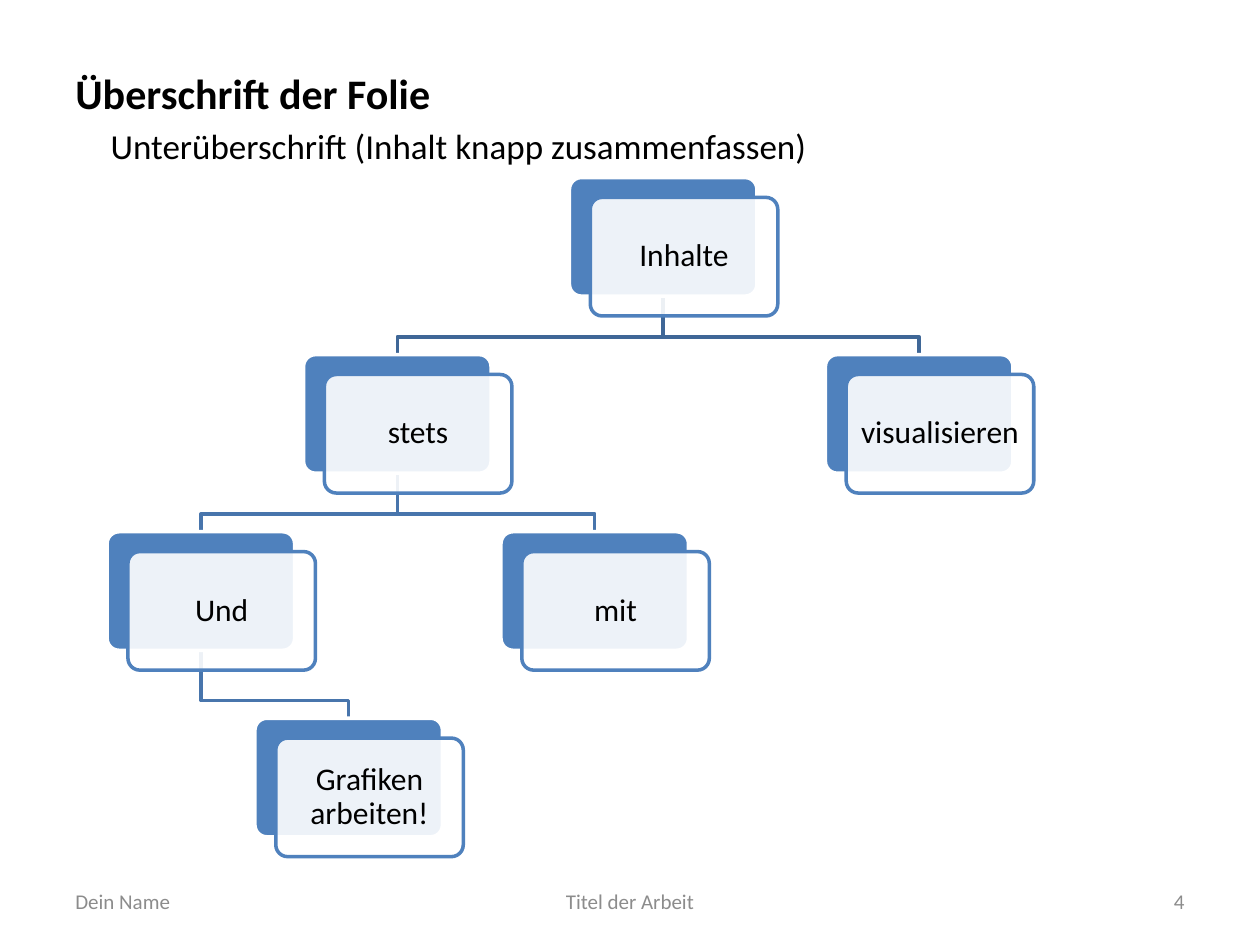
from lxml.etree import SubElement
from pptx import Presentation
from pptx.dml.color import RGBColor
from pptx.enum.shapes import MSO_SHAPE
from pptx.enum.text import MSO_ANCHOR, PP_ALIGN
from pptx.oxml.ns import qn
from pptx.util import Cm, Pt

BLACK = RGBColor(0x00, 0x00, 0x00)
WHITE = RGBColor(0xFF, 0xFF, 0xFF)
GREY = RGBColor(0x8C, 0x8C, 0x8C)
BLUE = RGBColor(0x4F, 0x81, 0xBD)
ROOT_BRANCH = RGBColor(0x3F, 0x67, 0x97)
LOWER_BRANCH = RGBColor(0x48, 0x75, 0xAC)

CARD_WIDTH, CARD_HEIGHT = Cm(3.78), Cm(2.39)
FRONT_SHIFT_X, FRONT_SHIFT_Y = Cm(0.42), Cm(0.4)
BEND_GAP = Cm(0.36)
OUTLINE = Pt(2)

# Label: (left and top in cm within the chart, parent label)
NODES = {
    "Inhalte": (9.32, 0, None),
    "stets": (3.96, 3.57, "Inhalte"),
    "Und": (0, 7.14, "stets"),
    "Grafiken arbeiten!": (2.98, 10.9, "Und"),
    "mit": (7.94, 7.14, "stets"),
    "visualisieren": (14.48, 3.57, "Inhalte"),
}


def write_text(shape, text, size, color=BLACK, bold=False,
               align=PP_ALIGN.LEFT, anchor=MSO_ANCHOR.MIDDLE):
    frame = shape.text_frame
    frame.word_wrap = True
    frame.vertical_anchor = anchor
    paragraph = frame.paragraphs[0]
    paragraph.alignment = align
    run = paragraph.add_run()
    run.text = text
    formats = {"name": "Calibri", "size": Pt(size), "bold": bold}
    for attribute, value in formats.items():
        setattr(run.font, attribute, value)
    run.font.color.rgb = color
    return paragraph


def add_heading(slide, left, top, width):
    title = slide.shapes.add_textbox(left, top, width, Cm(2.2))
    write_text(title, "Überschrift der Folie", 24, bold=True)
    subtitle = slide.shapes.add_textbox(left + Cm(0.71), top + Cm(1.63), Cm(18.26), Cm(1.11))
    write_text(subtitle, "Unterüberschrift (Inhalt knapp zusammenfassen)", 20,
               anchor=MSO_ANCHOR.TOP)


def add_footer(slide, left, top, width, height):
    side, middle = Cm(5.93), Cm(8.04)
    entries = (
        ("Dein Name", 0, side, PP_ALIGN.LEFT),
        ("Titel der Arbeit", (width - middle) // 2, middle, PP_ALIGN.CENTER),
        ("4", width - side, side, PP_ALIGN.RIGHT),
    )
    for text, offset, entry_width, align in entries:
        entry = slide.shapes.add_textbox(left + offset, top, entry_width, height)
        write_text(entry, text, 12, GREY, align=align)


def add_branch(slide, parent, child, color):
    """Draw a stepped line from the parent's bottom to the child's top."""
    start_x, child_x = (left + CARD_WIDTH // 2 for left, _ in (parent, child))
    start_y, child_y = parent[1] + CARD_HEIGHT, child[1]
    bend_y = child_y - BEND_GAP
    builder = slide.shapes.build_freeform(start_x, start_y)
    builder.add_line_segments(
        [(start_x, bend_y), (child_x, bend_y), (child_x, child_y)], close=False)
    branch = builder.convert_to_shape()
    branch.shadow.inherit = False
    branch.fill.background()
    branch.line.color.rgb = color
    branch.line.width = OUTLINE


def add_card(slide, left, top, fill, outline):
    card = slide.shapes.add_shape(
        MSO_SHAPE.ROUNDED_RECTANGLE, left, top, CARD_WIDTH, CARD_HEIGHT)
    card.adjustments[0] = 0.1
    card.shadow.inherit = False
    card.fill.solid()
    card.fill.fore_color.rgb = fill
    card.line.color.rgb = outline
    card.line.width = OUTLINE
    return card


def add_node(slide, left, top, label):
    """Place a blue card with a translucent, labelled card shifted over it."""
    add_card(slide, left, top, BLUE, WHITE)
    front = add_card(slide, left + FRONT_SHIFT_X, top + FRONT_SHIFT_Y, WHITE, BLUE)
    fill_color = front.fill._xPr.find(qn("a:solidFill"))[0]
    SubElement(fill_color, qn("a:alpha"), val="90000")
    for side in ("left", "top", "right", "bottom"):
        setattr(front.text_frame, f"margin_{side}", Cm(0.18))
    paragraph = write_text(front, label, 18, align=PP_ALIGN.CENTER)
    paragraph.line_spacing = 0.9


def add_hierarchy(slide, left, top):
    corners = {label: (left + Cm(x), top + Cm(y)) for label, (x, y, _) in NODES.items()}
    for label, (_, _, parent) in NODES.items():
        if parent:
            is_root = NODES[parent][2] is None
            add_branch(slide, corners[parent], corners[label],
                       ROOT_BRANCH if is_root else LOWER_BRANCH)
    for label, corner in corners.items():
        add_node(slide, *corner, label)


def main():
    presentation = Presentation()
    presentation.slide_width, presentation.slide_height = Cm(25.4), Cm(19.05)
    slide = presentation.slides.add_slide(presentation.slide_layouts[6])
    margin = Cm(1.27)
    content_width = presentation.slide_width - 2 * margin
    add_heading(slide, margin, Cm(0.76), content_width)
    add_footer(slide, margin, Cm(17.66), content_width, Cm(1.01))
    add_hierarchy(slide, Cm(2.16), Cm(3.58))
    presentation.save("out.pptx")


if __name__ == "__main__":
    main()
